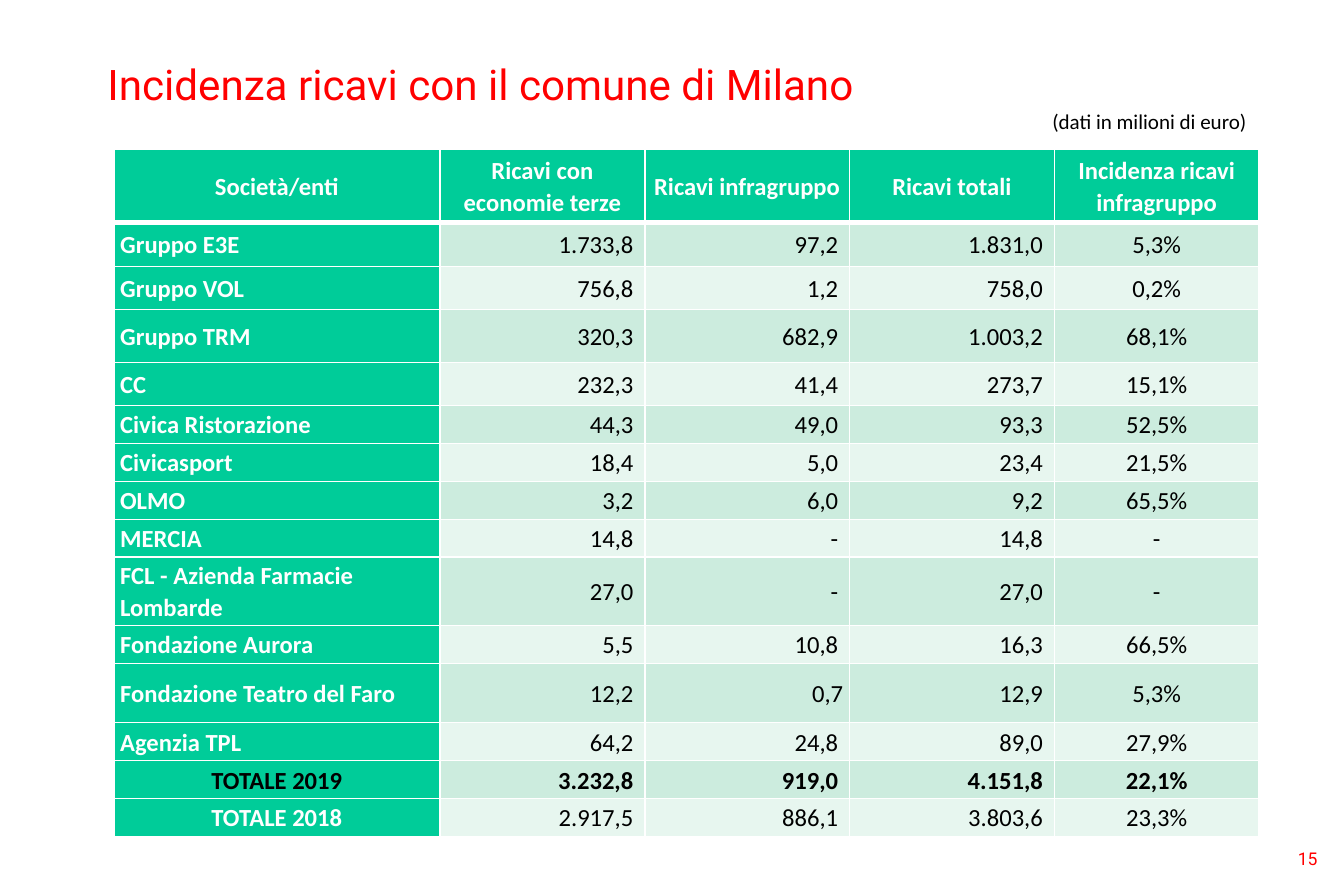
from dataclasses import dataclass

from lxml.etree import SubElement
from pptx import Presentation
from pptx.dml.color import RGBColor
from pptx.enum.text import MSO_ANCHOR, MSO_AUTO_SIZE, PP_ALIGN
from pptx.oxml.ns import qn
from pptx.util import Inches, Pt


@dataclass(frozen=True)
class Theme:
    accent: str = "FF0000"
    ink: str = "000000"
    white: str = "FFFFFF"
    green: str = "00CC99"
    bands: tuple = ("CCECDE", "E7F6EF")
    heading_font: str = "Roboto"
    body_font: str = "Calibri"
    title_size: int = 24
    table_size: int = 14
    unit_size: int = 12
    page_size: int = 10
    rule: int = 1
    header_rule: int = 3


THEME = Theme()
LEFT, CENTER, RIGHT = PP_ALIGN.LEFT, PP_ALIGN.CENTER, PP_ALIGN.RIGHT
COLUMN_WIDTHS = (2.58, 1.62, 1.62, 1.62, 1.62)
COLUMN_ALIGNMENTS = (LEFT, RIGHT, RIGHT, RIGHT, CENTER)
HEADER_HEIGHT = 0.58
HEADERS = (
    "Società/enti",
    "Ricavi con economie terze",
    "Ricavi infragruppo",
    "Ricavi totali",
    "Incidenza ricavi infragruppo",
)
REVENUES = (
    (0.35, "Gruppo E3E", "1.733,8", "97,2", "1.831,0", "5,3%"),
    (0.34, "Gruppo VOL", "756,8", "1,2", "758,0", "0,2%"),
    (0.42, "Gruppo TRM", "320,3", "682,9", "1.003,2", "68,1%"),
    (0.34, "CC", "232,3", "41,4", "273,7", "15,1%"),
    (0.3, "Civica Ristorazione", "44,3", "49,0", "93,3", "52,5%"),
    (0.3, "Civicasport", "18,4", "5,0", "23,4", "21,5%"),
    (0.3, "OLMO", "3,2", "6,0", "9,2", "65,5%"),
    (0.3, "MERCIA", "14,8", "-", "14,8", "-"),
    (0.54, "FCL - Azienda Farmacie Lombarde", "27,0", "-", "27,0", "-"),
    (0.3, "Fondazione Aurora", "5,5", "10,8", "16,3", "66,5%"),
    (0.47, "Fondazione Teatro del Faro", "12,2", "0,7", "12,9", "5,3%"),
    (0.3, "Agenzia TPL", "64,2", "24,8", "89,0", "27,9%"),
    (0.3, "TOTALE 2019", "3.232,8", "919,0", "4.151,8", "22,1%"),
    (0.3, "TOTALE 2018", "2.917,5", "886,1", "3.803,6", "23,3%"),
)


def set_attributes(target, values):
    for name, value in values.items():
        setattr(target, name, value)


def write(paragraph, text, font, size, color, alignment=LEFT, bold=False):
    run = paragraph.add_run()
    run.text = text
    paragraph.alignment = alignment
    set_attributes(run.font, {"name": font, "size": Pt(size), "bold": bold})
    run.font.color.rgb = RGBColor.from_string(color)


def add_border(cell, side, width):
    line = SubElement(cell._tc.get_or_add_tcPr(), qn(f"a:ln{side}"), w=str(Pt(width)))
    fill = SubElement(line, qn("a:solidFill"))
    SubElement(fill, qn("a:srgbClr"), val=THEME.white)


def fill_cell(cell, text, fill, color, alignment, bold, top, bottom, margin_right=0.05):
    set_attributes(cell, {
        "margin_left": Inches(0.05),
        "margin_right": Inches(margin_right),
        "margin_top": 0,
        "margin_bottom": 0,
        "vertical_anchor": MSO_ANCHOR.MIDDLE,
    })
    for side, width in (("L", THEME.rule), ("R", THEME.rule), ("T", top), ("B", bottom)):
        add_border(cell, side, width)
    cell.fill.solid()
    cell.fill.fore_color.rgb = RGBColor.from_string(fill)
    paragraph = cell.text_frame.paragraphs[0]
    paragraph.line_spacing = 1.07
    write(paragraph, text, THEME.body_font, THEME.table_size, color, alignment, bold)


def add_heading(slide):
    title = slide.shapes.title
    set_attributes(title, {
        "left": Inches(0.75), "top": Inches(0.41),
        "width": Inches(9.21), "height": Inches(0.45),
    })
    frame = title.text_frame
    set_attributes(frame, {
        "word_wrap": True,
        "auto_size": MSO_AUTO_SIZE.NONE,
        "vertical_anchor": MSO_ANCHOR.TOP,
    })
    write(frame.paragraphs[0], "Incidenza ricavi con il comune di Milano",
          THEME.heading_font, THEME.title_size, THEME.accent)
    write(frame.add_paragraph(), "(dati in milioni di euro)",
          THEME.body_font, THEME.unit_size, THEME.ink, RIGHT)


def add_revenue_table(slide):
    heights = (HEADER_HEIGHT, *(row[0] for row in REVENUES))
    table = slide.shapes.add_table(
        len(heights), len(HEADERS), Inches(0.9), Inches(1.18),
        Inches(sum(COLUMN_WIDTHS)), Inches(sum(heights)),
    ).table
    set_attributes(table, {"first_col": True, "horz_banding": False})
    for column, width in zip(table.columns, COLUMN_WIDTHS):
        column.width = Inches(width)
    for row, height in zip(table.rows, heights):
        row.height = Inches(height)
    for column, header in enumerate(HEADERS):
        fill_cell(table.cell(0, column), header, THEME.green, THEME.white,
                  CENTER, True, THEME.rule, THEME.header_rule)
    for index, (_, company, *figures) in enumerate(REVENUES):
        add_revenue_row(table, index, company, figures)


def add_revenue_row(table, index, company, figures):
    is_total = company.startswith("TOTALE")
    is_current_total = company == "TOTALE 2019"
    top = THEME.header_rule if index == 0 else THEME.rule
    fill_cell(table.cell(index + 1, 0), company, THEME.green,
              THEME.ink if is_current_total else THEME.white,
              CENTER if is_total else LEFT, True, top, THEME.rule)
    for column, figure in enumerate(figures, 1):
        alignment = COLUMN_ALIGNMENTS[column]
        margin_right = 0.09 if alignment == RIGHT and figure != "0,7" else 0.05
        fill_cell(table.cell(index + 1, column), figure, THEME.bands[index % 2],
                  THEME.ink, alignment, is_current_total, top, THEME.rule, margin_right)


def add_page_number(slide):
    page = slide.shapes.add_textbox(Inches(10.05), Inches(6.66), Inches(0.57), Inches(0.27))
    set_attributes(page.text_frame, {"word_wrap": True, "margin_right": Inches(0.2)})
    write(page.text_frame.paragraphs[0], "15", THEME.heading_font,
          THEME.page_size, THEME.accent, RIGHT)


def main():
    presentation = Presentation()
    set_attributes(presentation, {"slide_width": Inches(10.63), "slide_height": Inches(7.09)})
    slide = presentation.slides.add_slide(presentation.slide_layouts[5])
    add_page_number(slide)
    add_heading(slide)
    add_revenue_table(slide)
    presentation.save("out.pptx")


if __name__ == "__main__":
    main()
